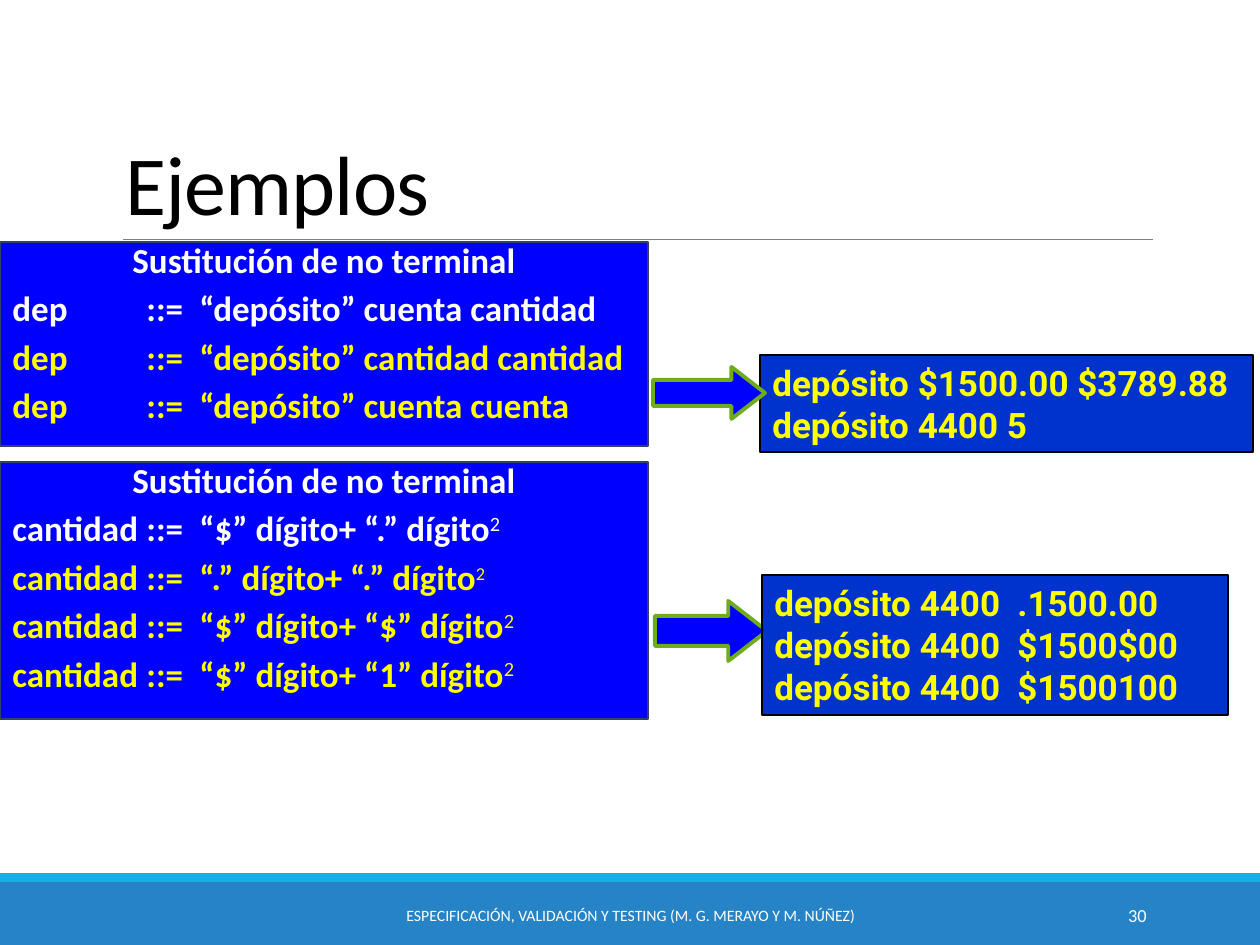
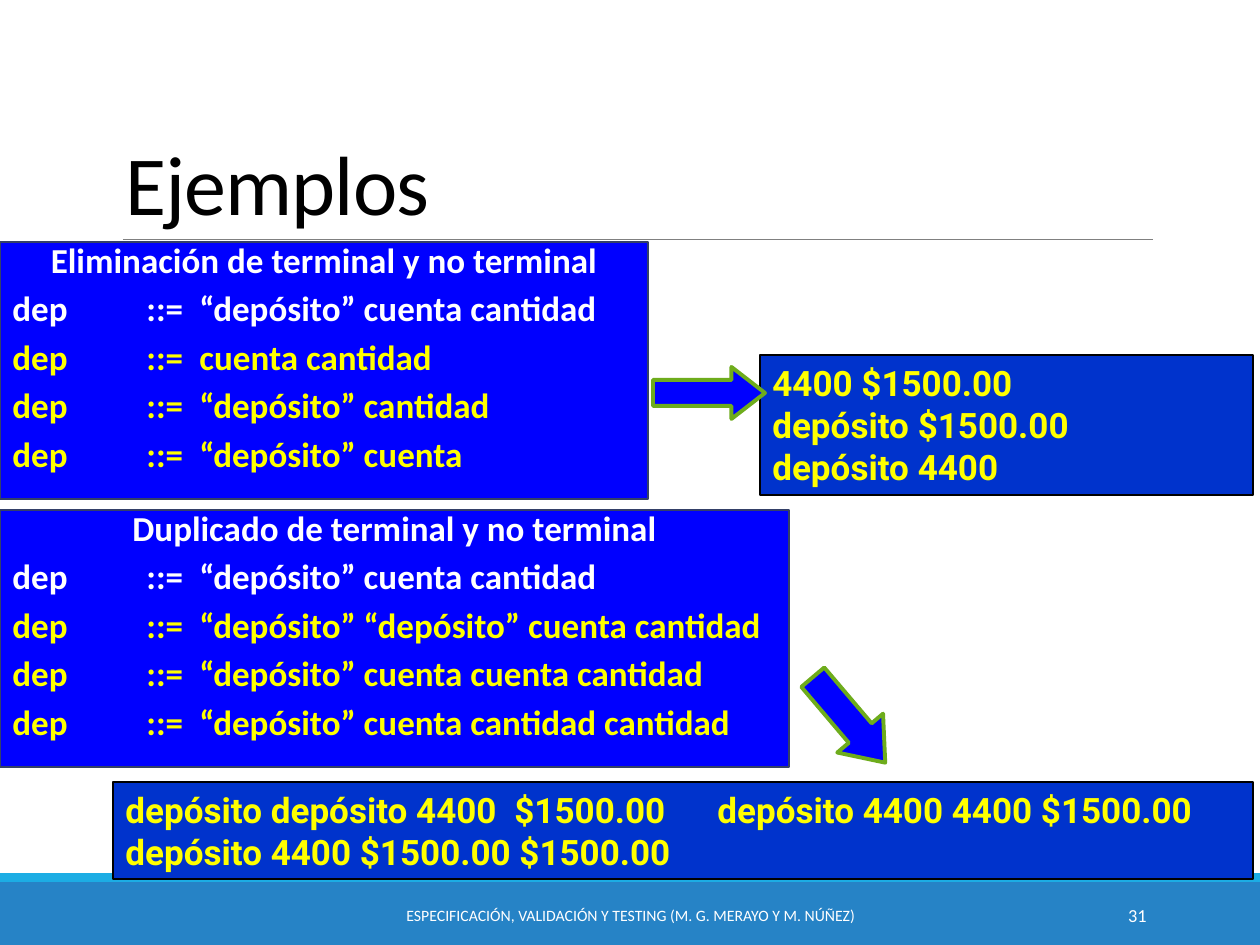
from dataclasses import dataclass
from typing import Union

from lxml.etree import SubElement
from pptx import Presentation
from pptx.dml.color import RGBColor
from pptx.enum.shapes import MSO_CONNECTOR as Connector, MSO_SHAPE as Preset
from pptx.enum.text import MSO_ANCHOR as Anchor, PP_ALIGN as Align
from pptx.oxml import parse_xml
from pptx.oxml.ns import nsdecls, qn
from pptx.util import Emu, Pt

EMU_PER_PX = 914400 / 126
COLORS = {
    "footer": "2683C6", "stripe": "1CADE4", "divider": "808080",
    "grammar": "0000FF", "grammar_edge": "344068",
    "result": "0033CC", "result_edge": "000000", "arrow_edge": "6EAC1C",
    "title": "000000", "plain": "FFFFFF", "mutant": "FFFF00",
}
BODY_FONT, RESULT_FONT = "Calibri", "Roboto"
TITLE = "Ejemplos"
COURSE = "ESPECIFICACIÓN, VALIDACIÓN Y TESTING (M. G. MERAYO Y M. NÚÑEZ)"
RULE_TABS = (134, 187)


@dataclass(frozen=True)
class Box:
    left: int
    top: int
    width: int
    height: int


@dataclass(frozen=True)
class Rule:
    symbol: str
    body: str
    exponent_size: int = 0


@dataclass(frozen=True)
class Grammar:
    box: Box
    heading: str
    rules: tuple[Rule, ...]


@dataclass(frozen=True)
class Result:
    box: Box
    lines: tuple[str, ...]
    tabs: tuple[int, ...] = ()


@dataclass(frozen=True)
class Arrow:
    box: Box
    rotation: float = 0


Item = Union[Grammar, Result, Arrow]


@dataclass(frozen=True)
class Page:
    number: int
    items: tuple[Item, ...]


def deposits(*bodies: str) -> tuple[Rule, ...]:
    """Return one rule for the symbol dep per body."""
    return tuple(Rule("dep", body) for body in bodies)


ORIGINAL_DEPOSIT = "“depósito” cuenta cantidad"
FIRST_ARROW = Arrow(Box(653, 367, 112, 52))
PAGES = (
    Page(30, (
        Grammar(Box(0, 242, 648, 204), "Sustitución de no terminal", deposits(
            ORIGINAL_DEPOSIT,
            "“depósito” cantidad cantidad",
            "“depósito” cuenta cuenta")),
        Result(Box(760, 355, 493, 97),
               ("depósito $1500.00 $3789.88", "depósito 4400 5")),
        FIRST_ARROW,
        Grammar(Box(0, 462, 648, 257), "Sustitución de no terminal", (
            Rule("cantidad", "“$” dígito+ “.” dígito", 20),
            Rule("cantidad", "“.” dígito+ “.” dígito", 18),
            Rule("cantidad", "“$” dígito+ “$” dígito", 20),
            Rule("cantidad", "“$” dígito+ “1” dígito", 20))),
        Arrow(Box(655, 601, 112, 60)),
        Result(Box(762, 575, 466, 140),
               ("depósito 4400\t.1500.00", "depósito 4400\t$1500$00",
                "depósito 4400\t$1500100"), (243,)),
    )),
    Page(31, (
        Grammar(Box(0, 242, 648, 257), "Eliminación de terminal y no terminal", deposits(
            ORIGINAL_DEPOSIT,
            "cuenta cantidad",
            "“depósito” cantidad",
            "“depósito” cuenta")),
        Result(Box(760, 355, 493, 140),
               ("4400 $1500.00", "depósito $1500.00", "depósito 4400")),
        FIRST_ARROW,
        Arrow(Box(793, 690, 112, 60), 49.7),
        Result(Box(113, 782, 1140, 97),
               ("depósito depósito 4400\t$1500.00\tdepósito 4400 4400 $1500.00",
                "depósito 4400 $1500.00 $1500.00"), (389, 592)),
        Grammar(Box(0, 510, 789, 257), "Duplicado de terminal y no terminal", deposits(
            ORIGINAL_DEPOSIT,
            "“depósito” “depósito” cuenta cantidad",
            "“depósito” cuenta cuenta cantidad",
            "“depósito” cuenta cantidad cantidad")),
    )),
)


def px(length: int) -> Emu:
    """Turn pixels into EMU."""
    return Emu(round(length * EMU_PER_PX))


def color(name: str) -> RGBColor:
    """Look up a named colour."""
    return RGBColor.from_string(COLORS[name])


def place(box: Box) -> tuple[Emu, ...]:
    """Return the box's left, top, width and height in EMU."""
    return px(box.left), px(box.top), px(box.width), px(box.height)


def add_filled(slide, preset, box: Box, fill: str, edge: str = "", weight: float = 0):
    """Add a filled preset shape, outlined if an edge colour is named."""
    shape = slide.shapes.add_shape(preset, *place(box))
    shape.shadow.inherit = False
    shape.fill.solid()
    shape.fill.fore_color.rgb = color(fill)
    if edge:
        shape.line.color.rgb = color(edge)
        shape.line.width = Pt(weight)
    else:
        shape.line.fill.background()
    shape.text_frame.vertical_anchor = Anchor.TOP
    return shape


def style(paragraph, font_name: str, size: float, ink: str, bold: bool = False,
          align=Align.LEFT) -> None:
    """Set a paragraph's font and alignment."""
    paragraph.alignment = align
    font = paragraph.font
    font.name, font.size, font.bold = font_name, Pt(size), bold
    font.color.rgb = color(ink)


def set_tabs(paragraph, stops: tuple[int, ...]) -> None:
    """Give a styled paragraph left tab stops."""
    if not stops:
        return
    tab_list = parse_xml(f"<a:tabLst {nsdecls('a')}/>")
    for stop in stops:
        SubElement(tab_list, qn("a:tab"), pos=str(px(stop)), algn="l")
    paragraph._p.get_or_add_pPr().find(qn("a:defRPr")).addprevious(tab_list)


def add_label(slide, box: Box, text: str, size: float, ink: str, align=Align.LEFT,
              anchor=Anchor.MIDDLE):
    """Add a one-paragraph text box and return its paragraph."""
    frame = slide.shapes.add_textbox(*place(box)).text_frame
    frame.word_wrap = True
    frame.vertical_anchor = anchor
    paragraph = frame.paragraphs[0]
    paragraph.add_run().text = text
    style(paragraph, BODY_FONT, size, ink, align=align)
    return paragraph


def draw_frame(slide, number: int) -> None:
    """Draw the title, divider and footer that every slide has."""
    add_filled(slide, Preset.RECTANGLE, Box(0, 882, 1260, 63), "footer")
    add_filled(slide, Preset.RECTANGLE, Box(0, 873, 1260, 9), "stripe")
    divider = slide.shapes.add_connector(
        Connector.STRAIGHT, px(123), px(239), px(1153), px(239))
    divider.line.color.rgb = color("divider")
    divider.line.width = Pt(0.5)
    SubElement(divider._element.spPr, qn("a:effectLst"))
    title = add_label(slide, Box(113, 39, 1046, 200), TITLE, 48, "title",
                      anchor=Anchor.BOTTOM)
    title.line_spacing = 0.85
    title.runs[0]._r.get_or_add_rPr().set("spc", "-50")
    add_label(slide, Box(381, 890, 499, 50), COURSE, 9, "plain", Align.CENTER)
    add_label(slide, Box(1023, 890, 136, 50), str(number), 10.5, "plain", Align.RIGHT)


def draw_grammar(slide, grammar: Grammar) -> None:
    """Draw a heading, the starting rule and its mutants."""
    shape = add_filled(slide, Preset.RECTANGLE, grammar.box, "grammar", "grammar_edge", 1.5)
    frame = shape.text_frame
    heading = frame.paragraphs[0]
    heading.add_run().text = grammar.heading
    style(heading, BODY_FONT, 20, "plain", True, Align.CENTER)
    heading.line_spacing = 0.75
    for index, rule in enumerate(grammar.rules):
        paragraph = frame.add_paragraph()
        paragraph.add_run().text = f"{rule.symbol}\t::=\t{rule.body}"
        style(paragraph, BODY_FONT, 20, "mutant" if index else "plain", True)
        paragraph.line_spacing = 0.75
        paragraph.space_before = Pt(9.7)
        set_tabs(paragraph, RULE_TABS)
        if rule.exponent_size:
            exponent = paragraph.add_run()
            exponent.text = "2"
            exponent.font.size = Pt(rule.exponent_size)
            exponent.font.bold = False
            exponent._r.get_or_add_rPr().set("baseline", "30000")


def draw_result(slide, result: Result) -> None:
    """Draw the strings that the mutants generate."""
    shape = add_filled(slide, Preset.RECTANGLE, result.box, "result", "result_edge", 1)
    frame = shape.text_frame
    for index, line in enumerate(result.lines):
        paragraph = frame.add_paragraph() if index else frame.paragraphs[0]
        paragraph.add_run().text = line
        style(paragraph, RESULT_FONT, 20, "mutant", True)
        set_tabs(paragraph, result.tabs)


def draw_arrow(slide, arrow: Arrow) -> None:
    """Draw a block arrow from a grammar to its result."""
    shape = add_filled(slide, Preset.RIGHT_ARROW, arrow.box, "grammar", "arrow_edge", 2.25)
    shape.adjustments[0], shape.adjustments[1] = 0.5, 0.645
    shape.rotation = arrow.rotation


DRAWERS = {Grammar: draw_grammar, Result: draw_result, Arrow: draw_arrow}


def main() -> None:
    """Build and save the presentation."""
    presentation = Presentation()
    presentation.slide_width, presentation.slide_height = px(1260), px(945)
    for page in PAGES:
        slide = presentation.slides.add_slide(presentation.slide_layouts[6])
        draw_frame(slide, page.number)
        for item in page.items:
            DRAWERS[type(item)](slide, item)
    presentation.save("out.pptx")


if __name__ == "__main__":
    main()
